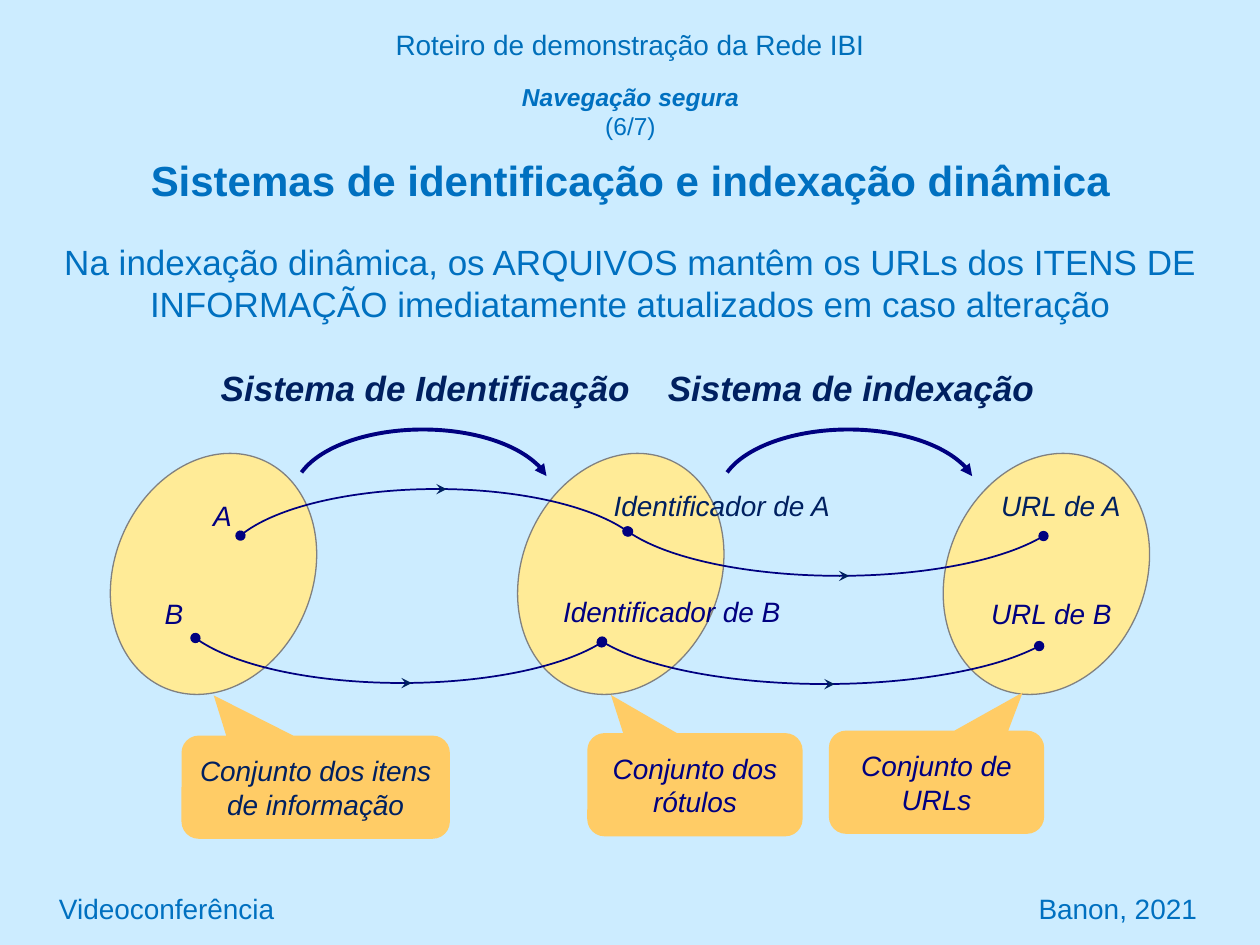
from lxml import etree
from pptx import Presentation
from pptx.dml.color import RGBColor
from pptx.enum.shapes import MSO_CONNECTOR, MSO_SHAPE
from pptx.enum.text import MSO_ANCHOR, PP_ALIGN
from pptx.oxml.ns import qn
from pptx.util import Cm, Pt

CENTER, LEFT = PP_ALIGN.CENTER, PP_ALIGN.LEFT
TOP, MIDDLE = MSO_ANCHOR.TOP, MSO_ANCHOR.MIDDLE
ARC, OVAL = MSO_SHAPE.ARC, MSO_SHAPE.OVAL
CALLOUT = MSO_SHAPE.ROUNDED_RECTANGULAR_CALLOUT
STRAIGHT = MSO_CONNECTOR.STRAIGHT

SKY = RGBColor(0xCC, 0xEC, 0xFF)
HEADER_BLUE = RGBColor(0x00, 0x6F, 0xBA)
BLUE = RGBColor(0x00, 0x70, 0xC0)
DARK = RGBColor(0x00, 0x20, 0x60)
NAVY = RGBColor(0x00, 0x00, 0x80)
YELLOW = RGBColor(0xFF, 0xEB, 0x97)
ORANGE = RGBColor(0xFF, 0xCC, 0x66)
GRAY = RGBColor(0x80, 0x80, 0x80)

# All lengths are in centimetres.
HEADER = "Roteiro de demonstração da Rede IBI"
SECTION, STEP = "Navegação segura", "(6/7)"
TITLE = "Sistemas de identificação e indexação dinâmica"
STATEMENT = ("Na indexação dinâmica, os ARQUIVOS mantêm os URLs dos ITENS DE "
             "INFORMAÇÃO imediatamente atualizados em caso alteração")
FOOTER = "Videoconferência\tBanon, 2021"
FOOTER_MARGIN, FOOTER_TAB = 1.19, 22.94

SET_LEFTS, SET_TOP, SET_SIZE, SET_ANGLE = (2.31, 10.52, 19.1), 9.07, (3.99, 5), 23

SYSTEMS = [  # name, text left, text width, arc left
    ("Sistema de Identificação", 4.17, 8.81, 5.92),
    ("Sistema de indexação", 13.18, 7.95, 14.5),
]
SYSTEM_TEXT_TOP, SYSTEM_ARC_TOP, SYSTEM_ARC_SIZE = 7.26, 8.66, (5.21, 2.64)
SYSTEM_ANGLES = (114.33, 210.79)

MAPPINGS = [  # left, top, width, bends downwards
    (4.5, 9.86, 8.61, False),
    (3.53, 10.67, 9.14, True),
    (12.22, 8.51, 9.4, True),
    (11.61, 10.69, 10.03, True),
]
MAPPING_HEIGHT, MAPPING_ANGLES, MARK_LENGTH = 3.1, (113.27, 209.83), 0.2

CALLOUTS = [  # text, left, top, width, pointer, colour
    ("Conjunto dos itens de informação", 3.66, 14.83, 5.41, (-0.38, -0.89), DARK),
    ("Conjunto dos rótulos", 11.84, 14.78, 4.34, (-0.39, -0.87), NAVY),
    ("Conjunto de URLs", 16.71, 14.73, 4.34, (0.4, -0.87), NAVY),
]
CALLOUT_HEIGHT = 2.08

ELEMENTS = [  # text, left, top, width, colour
    ("A", 4.04, 9.92, 0.89, NAVY),
    ("B", 3.07, 11.9, 0.86, NAVY),
    ("Identificador de A", 12.01, 9.73, 5.08, DARK),
    ("Identificador de B", 11.07, 11.86, 4.95, NAVY),
    ("URL de A", 19.91, 9.73, 2.95, DARK),
    ("URL de B", 19.71, 11.91, 2.97, NAVY),
]
ELEMENT_HEIGHT = 0.94


def add_run(paragraph, text, size=16, color=BLUE, bold=False, italic=False):
    run = paragraph.add_run()
    run.text = text
    font = run.font
    font.name, font.size, font.bold, font.italic = "Arial", Pt(size), bold, italic
    font.color.rgb = color


def write(shape, text, align=CENTER, anchor=TOP, wrap=True, **font):
    frame = shape.text_frame
    frame.word_wrap = wrap
    frame.vertical_anchor = anchor
    paragraph = frame.paragraphs[0]
    paragraph.alignment = align
    add_run(paragraph, text, **font)
    return paragraph


def add_text(slide, text, left, top, width, height, **text_format):
    box = slide.shapes.add_textbox(Cm(left), Cm(top), Cm(width), Cm(height))
    write(box, text, **text_format)
    return box


def add_shape(slide, preset, left, top, width, height, fill=None, line=None, weight=1):
    shape = slide.shapes.add_shape(preset, Cm(left), Cm(top), Cm(width), Cm(height))
    shape.shadow.inherit = False
    if fill is None:
        shape.fill.background()
    else:
        shape.fill.solid()
        shape.fill.fore_color.rgb = fill
    if line is None:
        shape.line.fill.background()
    else:
        shape.line.color.rgb = line
        shape.line.width = Pt(weight)
    return shape


def set_ends(shape, **ends):
    """Put heads on a line: headEnd at its start, tailEnd at its end."""
    line = shape.element.spPr.find(qn("a:ln"))
    for end, kind in ends.items():
        etree.SubElement(line, qn("a:" + end)).set("type", kind)


def add_arc(slide, left, top, width, height, angles, weight, flipped=False, **ends):
    arc = add_shape(slide, ARC, left, top, width, height, line=NAVY, weight=weight)
    arc.adjustments[0], arc.adjustments[1] = angles
    if flipped:
        arc.element.spPr.find(qn("a:xfrm")).set("flipV", "1")
    set_ends(arc, **ends)


def add_direction_mark(slide, x, y):
    mark = slide.shapes.add_connector(STRAIGHT, Cm(x), Cm(y), Cm(x + MARK_LENGTH), Cm(y))
    mark.line.color.rgb = DARK
    mark.line.width = Pt(0.75)
    set_ends(mark, tailEnd="stealth")
    etree.SubElement(mark.element.spPr, qn("a:effectLst"))


def add_headings(slide):
    add_text(slide, HEADER, 0, 0.43, 25.4, 0.94, color=HEADER_BLUE)
    heading = add_text(slide, SECTION, 1.9, 1.52, 21.62, 2.49,
                       size=14, bold=True, italic=True)
    section = heading.text_frame.paragraphs[0]
    section.add_line_break()
    add_run(section, STEP, size=14)
    title = heading.text_frame.add_paragraph()
    title.alignment = CENTER
    title.space_before = Pt(8)
    add_run(title, TITLE, size=24, bold=True)
    add_text(slide, STATEMENT, 0.71, 4.72, 24, 1.96, size=20)


def add_footer(slide):
    footer = add_text(slide, FOOTER, 0, 17.78, 25.4, 1.07, align=LEFT, anchor=MIDDLE)
    footer.text_frame.margin_left = Cm(FOOTER_MARGIN)
    properties = footer.text_frame.paragraphs[0]._p.get_or_add_pPr()
    stops = etree.SubElement(properties, qn("a:tabLst"))
    etree.SubElement(stops, qn("a:tab"), pos=str(Cm(FOOTER_TAB)), algn="r")


def add_diagram(slide):
    for left in SET_LEFTS:
        ellipse = add_shape(slide, OVAL, left, SET_TOP, *SET_SIZE,
                            fill=YELLOW, line=GRAY, weight=0.75)
        ellipse.rotation = SET_ANGLE

    for name, left, width, arc_left in SYSTEMS:
        add_arc(slide, arc_left, SYSTEM_ARC_TOP, *SYSTEM_ARC_SIZE, SYSTEM_ANGLES, 2.25,
                tailEnd="triangle")
        add_text(slide, name, left, SYSTEM_TEXT_TOP, width, 1.12, wrap=False,
                 size=20, color=DARK, bold=True, italic=True)

    for left, top, width, downwards in MAPPINGS:
        add_arc(slide, left, top, width, MAPPING_HEIGHT, MAPPING_ANGLES, 1, downwards,
                headEnd="oval", tailEnd="oval")
        apex = top + MAPPING_HEIGHT if downwards else top
        add_direction_mark(slide, left + width / 2, apex)

    for text, left, top, width, pointer, color in CALLOUTS:
        callout = add_shape(slide, CALLOUT, left, top, width, CALLOUT_HEIGHT, fill=ORANGE)
        callout.adjustments[0], callout.adjustments[1] = pointer
        write(callout, text, anchor=MIDDLE, color=color, italic=True)

    for text, left, top, width, color in ELEMENTS:
        add_text(slide, text, left, top, width, ELEMENT_HEIGHT, wrap=False,
                 color=color, italic=True)


def main():
    presentation = Presentation()
    presentation.slide_width, presentation.slide_height = Cm(25.4), Cm(19.05)
    slide = presentation.slides.add_slide(presentation.slide_layouts[6])
    slide.background.fill.solid()
    slide.background.fill.fore_color.rgb = SKY
    add_headings(slide)
    add_diagram(slide)
    add_footer(slide)
    presentation.save("out.pptx")


if __name__ == "__main__":
    main()
